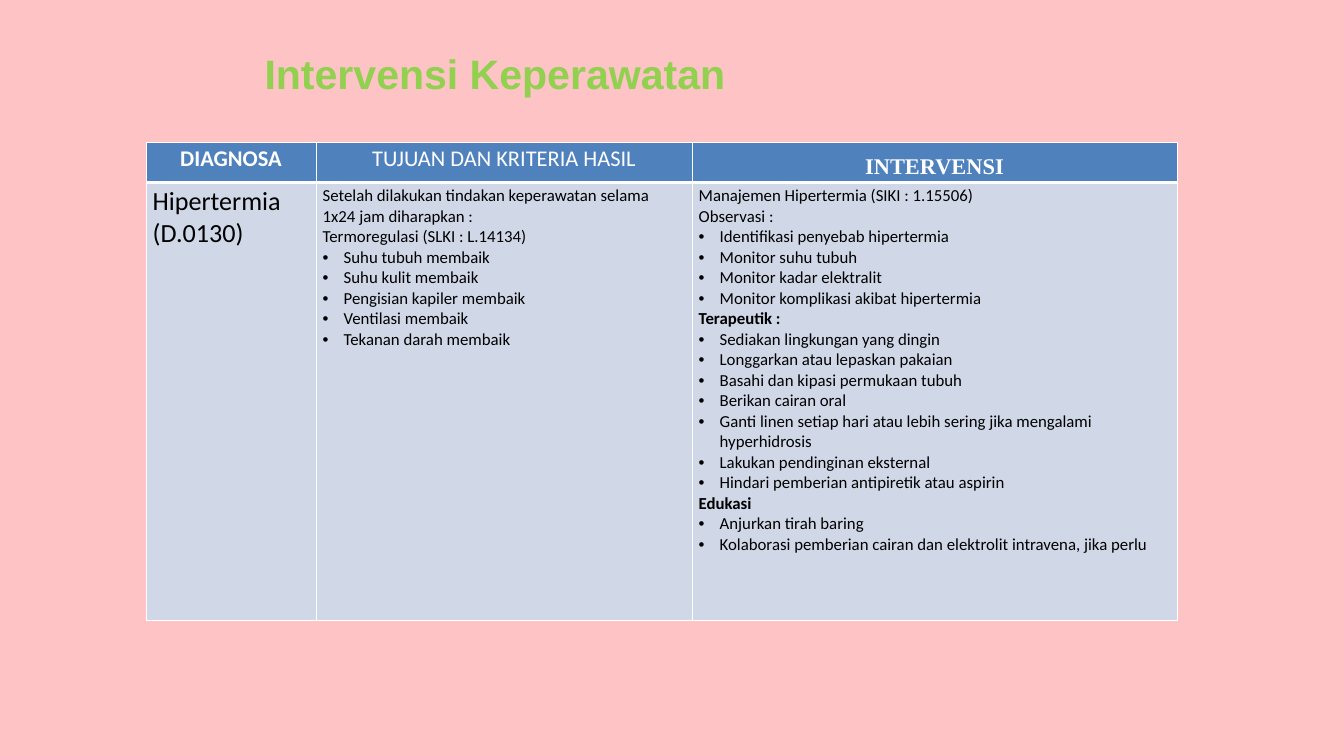
from lxml import etree
from pptx import Presentation
from pptx.dml.color import RGBColor
from pptx.enum.text import MSO_ANCHOR, MSO_AUTO_SIZE, PP_ALIGN
from pptx.oxml.ns import qn
from pptx.util import Emu, Pt

CENTER, LEFT = PP_ALIGN.CENTER, PP_ALIGN.LEFT
TOP = MSO_ANCHOR.TOP
FIT_SHAPE = MSO_AUTO_SIZE.SHAPE_TO_FIT_TEXT
TITLE_ONLY = 5
COLORS = {"background": "FDC3C5", "title": "92D050", "header": "4F81BD",
          "body": "D0D8E8", "white": "FFFFFF", "black": "000000"}

# Content: header cells carry their own format, "• " marks a list item, "*" a bold line
TITLE = "Intervensi Keperawatan "
HEADERS = [
    ("DIAGNOSA", {}),
    ("TUJUAN DAN KRITERIA HASIL", {"bold": False}),
    ("INTERVENSI", {"name": "Times New Roman"}),
]
BODY = [
    (28, ["Hipertermia", "(D.0130)"]),
    (18, [
        "Setelah dilakukan tindakan keperawatan selama 1x24 jam diharapkan :",
        "Termoregulasi (SLKI : L.14134)",
        "• Suhu tubuh membaik",
        "• Suhu kulit membaik",
        "• Pengisian kapiler membaik",
        "• Ventilasi membaik",
        "• Tekanan darah membaik",
    ]),
    (18, [
        "Manajemen Hipertermia (SIKI : 1.15506)",
        "Observasi :",
        "• Identifikasi penyebab hipertermia",
        "• Monitor suhu tubuh",
        "• Monitor kadar elektralit",
        "• Monitor komplikasi akibat hipertermia",
        "*Terapeutik :",
        "• Sediakan lingkungan yang dingin",
        "• Longgarkan atau lepaskan pakaian",
        "• Basahi dan kipasi permukaan tubuh",
        "• Berikan cairan oral",
        "• Ganti linen setiap hari atau lebih sering jika mengalami hyperhidrosis",
        "• Lakukan pendinginan eksternal",
        "• Hindari pemberian antipiretik atau aspirin",
        "*Edukasi",
        "• Anjurkan tirah baring",
        "• Kolaborasi pemberian cairan dan elektrolit intravena, jika perlu",
    ]),
]

# Layout in px
SLIDE_SIZE = (1344, 756)
TITLE_BOX = (207, 56, 588, 42)
TABLE_ORIGIN = (146, 142)
COLUMN_WIDTHS = [170, 376, 485]
ROW_HEIGHTS = [39, 438]
BULLET_INDENT = 21
CELL_MARGIN = 5


def px(value):
    return Emu(round(value * 914400 / 67.2))


def rgb(name):
    return RGBColor.from_string(COLORS[name])


def write(paragraph, text, color, align=LEFT, **font_format):
    paragraph.alignment = align
    run = paragraph.add_run()
    run.text = text
    run.font.color.rgb = rgb(color)
    for attribute, value in font_format.items():
        setattr(run.font, attribute, value)


def add_bullet(paragraph):
    properties = paragraph._p.get_or_add_pPr()
    properties.set("marL", str(px(BULLET_INDENT)))
    properties.set("indent", str(-px(BULLET_INDENT)))
    etree.SubElement(properties, qn("a:buFont"), typeface="Arial")
    etree.SubElement(properties, qn("a:buChar"), char="•")


def style_cell(cell, fill, bottom_width=1):
    # Borders come before the fill in the cell properties
    properties = cell._tc.get_or_add_tcPr()
    for side, width in (("L", 1), ("R", 1), ("T", 1), ("B", bottom_width)):
        line = etree.SubElement(properties, qn(f"a:ln{side}"), w=str(Pt(width)))
        line_fill = etree.SubElement(line, qn("a:solidFill"))
        etree.SubElement(line_fill, qn("a:srgbClr"), val=COLORS["white"])
    cell.fill.solid()
    cell.fill.fore_color.rgb = rgb(fill)
    cell.vertical_anchor = TOP


presentation = Presentation()
presentation.slide_width, presentation.slide_height = map(px, SLIDE_SIZE)
slide = presentation.slides.add_slide(presentation.slide_layouts[TITLE_ONLY])
slide.background.fill.solid()
slide.background.fill.fore_color.rgb = rgb("background")

# Title
title = slide.shapes.title
title.left, title.top, title.width, title.height = map(px, TITLE_BOX)
title_format = {"margin_left": 0, "margin_right": 0, "margin_top": 0, "margin_bottom": 0,
                "vertical_anchor": TOP, "word_wrap": True, "auto_size": FIT_SHAPE}
for attribute, value in title_format.items():
    setattr(title.text_frame, attribute, value)
heading = title.text_frame.paragraphs[0]
write(heading, TITLE, "title", CENTER, name="Arial", size=Pt(44), bold=True)
heading.line_spacing = Pt(45)

# Table grid
table = slide.shapes.add_table(
    len(ROW_HEIGHTS), len(COLUMN_WIDTHS), *map(px, TABLE_ORIGIN),
    px(sum(COLUMN_WIDTHS)), px(sum(ROW_HEIGHTS))).table
for column, width in zip(table.columns, COLUMN_WIDTHS):
    column.width = px(width)
for row, height in zip(table.rows, ROW_HEIGHTS):
    row.height = px(height)

# Header row
for index, (text, changes) in enumerate(HEADERS):
    cell = table.cell(0, index)
    style_cell(cell, "header", bottom_width=3)
    font_format = {"name": "Calibri", "size": Pt(24), "bold": True} | changes
    write(cell.text_frame.paragraphs[0], text, "white", CENTER, **font_format)

intervention = table.cell(0, len(HEADERS) - 1)
intervention.margin_left = intervention.margin_right = px(CELL_MARGIN)
intervention.margin_top = intervention.margin_bottom = 0
intervention.text_frame.paragraphs[0].line_spacing = 1.5

# Body row
for index, (size, lines) in enumerate(BODY):
    cell = table.cell(1, index)
    style_cell(cell, "body")
    frame = cell.text_frame
    for number, line in enumerate(lines):
        paragraph = frame.add_paragraph() if number else frame.paragraphs[0]
        if line.startswith("• "):
            add_bullet(paragraph)
        write(paragraph, line.removeprefix("• ").removeprefix("*"), "black",
              name="Calibri", size=Pt(size), bold=line.startswith("*"))

presentation.save("out.pptx")
